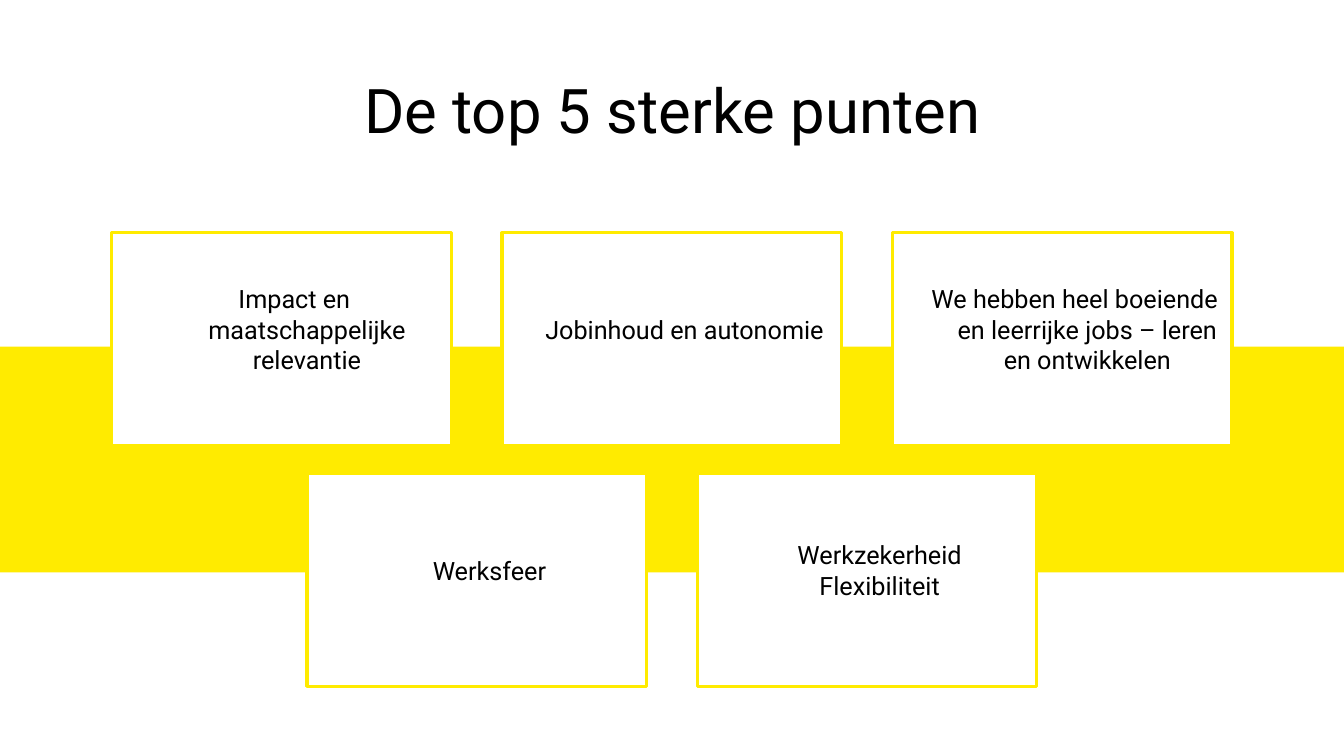
from dataclasses import dataclass

from pptx import Presentation
from pptx.dml.color import RGBColor
from pptx.enum.shapes import MSO_SHAPE
from pptx.enum.text import MSO_ANCHOR, MSO_AUTO_SIZE, PP_ALIGN
from pptx.util import Inches, Pt

RECTANGLE = MSO_SHAPE.RECTANGLE
MIDDLE = MSO_ANCHOR.MIDDLE
CENTER = PP_ALIGN.CENTER
NO_AUTOFIT = MSO_AUTO_SIZE.NONE
TITLE_ONLY = 5


@dataclass(frozen=True)
class Theme:
    """Colours and type of the slide."""
    font: str = "Roboto"
    text: RGBColor = RGBColor(0x00, 0x00, 0x00)
    card: RGBColor = RGBColor(0xFF, 0xFF, 0xFF)
    accent: RGBColor = RGBColor(0xFF, 0xEB, 0x00)
    title_size: Pt = Pt(44)
    card_size: Pt = Pt(18)
    border: Pt = Pt(2.25)


THEME = Theme()
SLIDE_WIDTH, SLIDE_HEIGHT = 13.33, 7.5
CARD_WIDTH, CARD_HEIGHT = 3.37, 2.11
COLUMN_GAP, ROW_GAP = 0.5, 0.28
STRENGTH_ROWS = [
    [
        ["Impact en maatschappelijke relevantie"],
        ["Jobinhoud en autonomie"],
        ["We hebben heel boeiende en leerrijke jobs – leren en ontwikkelen"],
    ],
    [["Werksfeer"], ["Werkzekerheid", "Flexibiliteit"]],
]


def set_frame(frame, insets):
    """Anchor the text in the middle of its box, with insets in inches."""
    frame.word_wrap = True
    frame.auto_size = NO_AUTOFIT
    frame.vertical_anchor = MIDDLE
    (frame.margin_left, frame.margin_top,
     frame.margin_right, frame.margin_bottom) = map(Inches, insets)


def add_run(paragraph, text, size):
    """Add one centred run in the theme's font."""
    paragraph.alignment = CENTER
    run = paragraph.add_run()
    run.text = text
    run.font.name = THEME.font
    run.font.size = size
    run.font.bold = False
    run.font.color.rgb = THEME.text


def add_rectangle(slide, left, top, width, height, fill):
    """Draw a flat rectangle without an outline."""
    rectangle = slide.shapes.add_shape(
        RECTANGLE, Inches(left), Inches(top), Inches(width), Inches(height))
    rectangle.shadow.inherit = False
    rectangle.fill.solid()
    rectangle.fill.fore_color.rgb = fill
    rectangle.line.fill.background()
    return rectangle


def place_title(slide, text, left, top, width, height):
    """Place and format the title placeholder."""
    title = slide.shapes.title
    title.left, title.top = Inches(left), Inches(top)
    title.width, title.height = Inches(width), Inches(height)
    set_frame(title.text_frame, (0, 0, 0, 0))
    paragraph = title.text_frame.paragraphs[0]
    paragraph.line_spacing = 0.86
    add_run(paragraph, text, THEME.title_size)


def add_card(slide, strength, left, top):
    """Draw one outlined card with a paragraph per line of the strength."""
    card = add_rectangle(slide, left, top, CARD_WIDTH, CARD_HEIGHT, THEME.card)
    card.line.color.rgb = THEME.accent
    card.line.width = THEME.border
    frame = card.text_frame
    set_frame(frame, (0.12, 0, 0.12, 0.2))
    for index, line in enumerate(strength):
        paragraph = frame.add_paragraph() if index else frame.paragraphs[0]
        properties = paragraph._p.get_or_add_pPr()
        properties.set("marL", str(Inches(0.5)))
        properties.set("indent", str(Inches(-0.25)))
        add_run(paragraph, line, THEME.card_size)


def add_cards(slide, rows, left, top, width):
    """Lay out rows of cards, each row centred in the given width."""
    for row_index, row in enumerate(rows):
        row_width = len(row) * (CARD_WIDTH + COLUMN_GAP) - COLUMN_GAP
        row_left = left + (width - row_width) / 2
        row_top = top + row_index * (CARD_HEIGHT + ROW_GAP)
        for column, strength in enumerate(row):
            card_left = row_left + column * (CARD_WIDTH + COLUMN_GAP)
            add_card(slide, strength, card_left, row_top)


def build_strengths_slide(presentation):
    """Build the slide with the five strengths."""
    slide = presentation.slides.add_slide(presentation.slide_layouts[TITLE_ONLY])
    band = add_rectangle(slide, 0, 3.44, SLIDE_WIDTH, 2.24, THEME.accent)
    slide.shapes.title._element.addprevious(band._element)
    place_title(slide, "De top 5 sterke punten", 0.41, 0.47, 12.52, 1.33)
    add_cards(slide, STRENGTH_ROWS, 0, 2.31, SLIDE_WIDTH)


def main():
    """Create and save the presentation."""
    presentation = Presentation()
    presentation.slide_width = Inches(SLIDE_WIDTH)
    presentation.slide_height = Inches(SLIDE_HEIGHT)
    build_strengths_slide(presentation)
    presentation.save("out.pptx")


if __name__ == "__main__":
    main()
